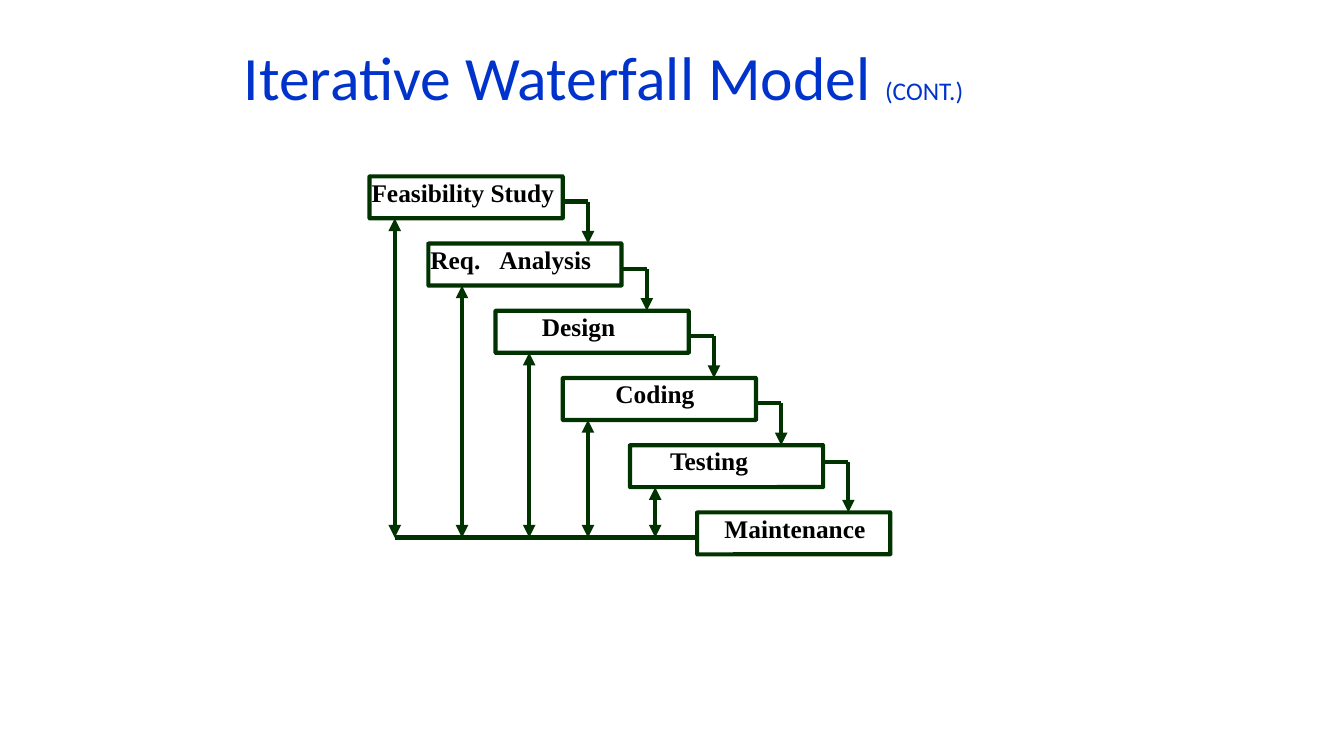
import pptx
import pptx.dml.color
import pptx.enum.shapes
import pptx.enum.text
import pptx.oxml.ns
import pptx.util
from lxml import etree

Pt = pptx.util.Pt
BLUE, GREEN, BLACK = "0033CC", "003300", "000000"

# Content: text runs, left edge, text indent, drop of the exit line, x of the feedback arrow
TITLE = ["Iterative Waterfall Model ", "(CONT.)"]
PHASES = [
    (["Feasibility Study"], 264, 0, 18, 282),
    (["Req.", " ", "Analysis"], 306, 0, 18, 330),
    (["Design"], 354, 31.7, 18, 378),
    (["Coding"], 402, 36.2, 18, 420),
    (["Testing"], 450, 27.2, 12, 468),
    (["Maintenance"], 498, 18.1, None, None),
]

# Layout in points
TOP, STEP = 126, 48
BOX_W, BOX_H = 138, 30
ELBOW = 18
FEEDBACK_Y = 384
LINE_W = 3
TEXT_SIZE = 18.1
WORD_GAP = 9


def color(hex_code):
    return pptx.dml.color.RGBColor.from_string(hex_code)


def add_text(p, text, size=TEXT_SIZE, font="Times New Roman", fill=BLACK, bold=False, spacing=0):
    r = p.add_run()
    r.text = text
    r.font.size = Pt(size)
    r.font.name = font
    r.font.bold = bold
    r.font.color.rgb = color(fill)
    if spacing:
        r.font._element.set("spc", str(spacing * 100))


def set_frame(tf, anchor, line_spacing):
    tf.word_wrap = True
    tf.auto_size = pptx.enum.text.MSO_AUTO_SIZE.NONE
    tf.vertical_anchor = anchor
    tf.margin_left = tf.margin_right = Pt(1.4)
    tf.margin_top = tf.margin_bottom = Pt(3.6)
    p = tf.paragraphs[0]
    p.alignment = pptx.enum.text.PP_ALIGN.LEFT
    p.line_spacing = line_spacing
    p.space_before = Pt(0)
    return p


def add_line(s, x1, y1, x2, y2, ends=()):
    line = s.shapes.add_connector(pptx.enum.shapes.MSO_CONNECTOR.STRAIGHT,
                                  Pt(x1), Pt(y1), Pt(x2), Pt(y2))
    line.line.color.rgb = color(GREEN)
    line.line.width = Pt(LINE_W)
    ln = line.line._get_or_add_ln()
    for end in ends:
        etree.SubElement(ln, pptx.oxml.ns.qn("a:" + end), type="triangle")
    etree.SubElement(line._element.spPr, pptx.oxml.ns.qn("a:effectLst"))


def add_phase(s, words, left, top, indent):
    sp = s.shapes.add_shape(pptx.enum.shapes.MSO_SHAPE.ROUNDED_RECTANGLE,
                            Pt(left), Pt(top), Pt(BOX_W), Pt(BOX_H))
    sp.adjustments[0] = 0.004
    sp.shadow.inherit = False
    sp.fill.background()
    sp.line.color.rgb = color(GREEN)
    sp.line.width = Pt(LINE_W)
    p = set_frame(sp.text_frame, pptx.enum.text.MSO_ANCHOR.TOP, 0.85)
    p._p.get_or_add_pPr().set("marL", str(Pt(indent)))
    for word in words:
        add_text(p, word, bold=True, spacing=WORD_GAP if word == " " else 0)


def main():
    prs = pptx.Presentation()
    prs.slide_width, prs.slide_height = Pt(960), Pt(540)
    s = prs.slides.add_slide(prs.slide_layouts[5])

    # Title
    title = s.shapes.title
    title.left, title.top, title.width, title.height = Pt(172.8), Pt(13), Pt(614), Pt(89.3)
    p = set_frame(title.text_frame, pptx.enum.text.MSO_ANCHOR.MIDDLE, 0.9)
    for text, size in zip(TITLE, (44, TEXT_SIZE)):
        add_text(p, text, size=size, font="Calibri", fill=BLUE)

    # Phases, each with an elbow arrow to the next and a feedback arrow
    for i, (words, left, indent, drop, feedback_x) in enumerate(PHASES):
        top = TOP + i * STEP
        add_phase(s, words, left, top, indent)
        if drop is None:
            continue
        right, exit_y = left + BOX_W, top + drop
        add_line(s, right, exit_y, right + ELBOW, exit_y)
        add_line(s, right + ELBOW, exit_y, right + ELBOW, top + STEP, ["tailEnd"])
        add_line(s, feedback_x, FEEDBACK_Y, feedback_x, top + BOX_H, ["headEnd", "tailEnd"])

    # Shared feedback line from the last phase back to the first
    add_line(s, PHASES[-1][1], FEEDBACK_Y, PHASES[0][4], FEEDBACK_Y)

    prs.save("out.pptx")


if __name__ == "__main__":
    main()
